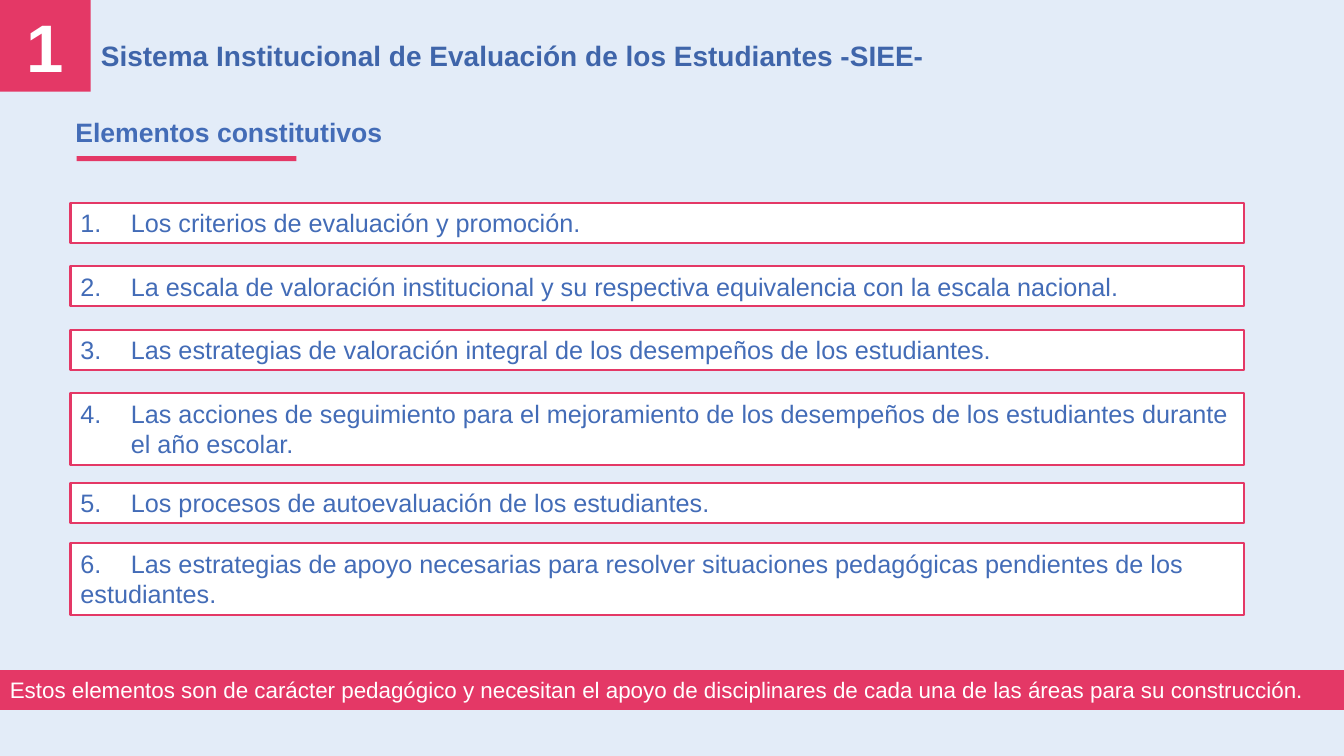
from pptx import Presentation
from pptx.dml.color import RGBColor
from pptx.enum import shapes, text
from pptx.util import Inches, Pt
from lxml import etree

PALE_BLUE = RGBColor(0xE3, 0xEC, 0xF8)
TITLE_BLUE = RGBColor(0x3F, 0x65, 0xAA)
TEXT_BLUE = RGBColor(0x43, 0x6C, 0xB7)
PINK = RGBColor(0xE4, 0x38, 0x66)
WHITE = RGBColor(0xFF, 0xFF, 0xFF)
A = "http://schemas.openxmlformats.org/drawingml/2006/main"


def write(shape, words, size, color, bold=False, align=text.PP_ALIGN.LEFT,
          anchor=text.MSO_ANCHOR.TOP, wrap=True):
    frame = shape.text_frame
    frame.word_wrap = wrap
    frame.auto_size = text.MSO_AUTO_SIZE.NONE
    frame.vertical_anchor = anchor
    paragraph = frame.paragraphs[0]
    paragraph.alignment = align
    run = paragraph.add_run()
    run.text = words
    run.font.name = "Arial"
    run.font.size = Pt(size)
    run.font.bold = bold
    run.font.color.rgb = color
    return paragraph


def add_box(left, top, width, height, fill, line=None):
    box = slide.shapes.add_shape(shapes.MSO_SHAPE.RECTANGLE, Inches(left),
                                 Inches(top), Inches(width), Inches(height))
    box.shadow.inherit = False
    box.fill.solid()
    box.fill.fore_color.rgb = fill
    if line is None:
        box.line.fill.background()
    else:
        box.line.color.rgb = line
        box.line.width = Pt(1.5)
    return box


prs = Presentation()
prs.slide_width, prs.slide_height = Inches(13.33), Inches(7.5)
slide = prs.slides.add_slide(prs.slide_layouts[5])
slide.background.fill.solid()
slide.background.fill.fore_color.rgb = PALE_BLUE

# Title and section number
title = slide.shapes.title
title.left, title.top = Inches(0.9), Inches(0.33)
title.width, title.height = Inches(12.3), Inches(0.44)
write(title, "Sistema Institucional de Evaluación de los Estudiantes -SIEE-",
      20, TITLE_BLUE, bold=True)
section_number = add_box(-0.01, 0, 0.91, 0.91, PINK)
write(section_number, "1", 48, WHITE, bold=True,
      align=text.PP_ALIGN.CENTER, anchor=text.MSO_ANCHOR.MIDDLE)

# Underlined heading
heading = slide.shapes.add_textbox(Inches(0.65), Inches(1.1),
                                   Inches(3.29), Inches(0.42))
write(heading, "Elementos constitutivos", 19, TEXT_BLUE, bold=True, wrap=False)
add_box(0.76, 1.55, 2.18, 0.05, PINK)

# Numbered elements: top, height, hanging indent, wording
elements = [
    (2.01, 0.4, 0.5, "Los criterios de evaluación y promoción."),
    (2.64, 0.4, 0.5, "La escala de valoración institucional y su respectiva "
                     "equivalencia con la escala nacional."),
    (3.27, 0.4, 0.5, "Las estrategias de valoración integral de los desempeños "
                     "de los estudiantes."),
    (3.9, 0.71, 0.5, "Las acciones de seguimiento para el mejoramiento de los "
                     "desempeños de los estudiantes durante el año escolar."),
    (4.79, 0.4, 0.5, "Los procesos de autoevaluación de los estudiantes."),
    (5.39, 0.71, 0, "Las estrategias de apoyo necesarias para resolver "
                    "situaciones pedagógicas pendientes de los estudiantes."),
]
for number, (top, height, indent, wording) in enumerate(elements, 1):
    element = add_box(0.7, top, 11.64, height, WHITE, line=PINK)
    paragraph = write(element, f"{number}.\t{wording}", 18, TEXT_BLUE)
    properties = paragraph._p.get_or_add_pPr()
    properties.set("marL", str(Inches(indent)))
    properties.set("indent", str(-Inches(indent)))
    stops = etree.SubElement(properties, f"{{{A}}}tabLst")
    etree.SubElement(stops, f"{{{A}}}tab", pos=str(Inches(0.5)), algn="l")

# Closing band
closing = add_box(0, 6.66, 13.33, 0.37, PINK, line=PINK)
write(closing, "Estos elementos son de carácter pedagógico y necesitan el apoyo "
      "de disciplinares de cada una de las áreas para su construcción.",
      16, WHITE, align=text.PP_ALIGN.JUSTIFY)

prs.save("out.pptx")
